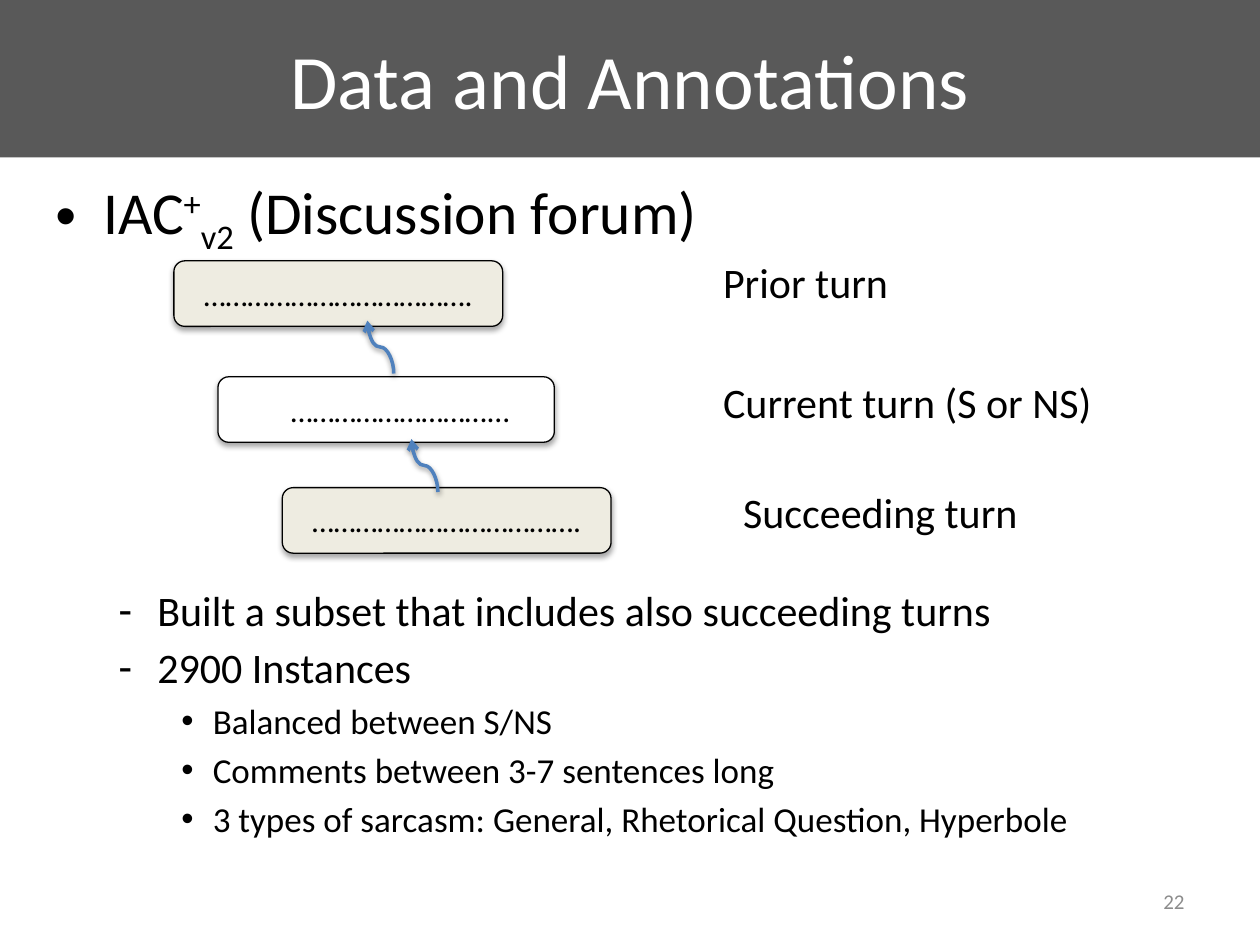
from lxml.etree import SubElement
from pptx import Presentation
from pptx.dml.color import RGBColor
from pptx.enum.shapes import MSO_CONNECTOR, MSO_SHAPE
from pptx.enum.text import MSO_ANCHOR, PP_ALIGN
from pptx.oxml.ns import qn
from pptx.util import Inches, Pt

FONT = "Calibri"
WHITE = RGBColor(0xFF, 0xFF, 0xFF)
BLACK = RGBColor(0, 0, 0)
BANNER = RGBColor(0x59, 0x59, 0x59)
BEIGE = RGBColor(0xEE, 0xEC, 0xE1)
BLUE = RGBColor(0x4F, 0x81, 0xBD)
GRAY = RGBColor(0x8C, 0x8C, 0x8C)

# level: (bullet, left indent, hanging indent, size)
LEVELS = {
    0: ("•", 0.38, 0.38, 34),
    1: ("-", 0.81, 0.31, 24),
    2: ("•", 1.25, 0.25, 20),
}
FINDINGS = [
    (1, "Built a subset that includes also succeeding turns"),
    (1, "2900 Instances"),
    (2, "Balanced between S/NS"),
    (2, "Comments between 3-7 sentences long"),
    (2, "3 types of sarcasm: General, Rhetorical Question, Hyperbole"),
]
# turn box (left, top, width), fill, dots, extra left inset
TURNS = [
    ((1.38, 2.07, 2.61), BEIGE, "……………………………….", 0),
    ((1.73, 2.99, 2.67), WHITE, "………………………...", 0.23),
    ((2.24, 3.87, 2.61), BEIGE, "……………………………….", 0),
]
TURN_LABELS = [
    ((5.64, 1.99, 2.32, 0.5), "Prior turn"),
    ((5.64, 2.94, 3.62, 0.5), "Current turn (S or NS)"),
    ((5.8, 3.81, 2.74, 0.5), "Succeeding turn"),
]
REPLY_ARROWS = [(2.81, 2.65), (3.16, 3.59)]


def format_runs(paragraph, size, color=BLACK):
    for run in paragraph.runs:
        run.font.name = FONT
        run.font.size = Pt(size)
        run.font.color.rgb = color


def add_text(slide, place, text, size, color=BLACK, align=PP_ALIGN.LEFT,
             anchor=MSO_ANCHOR.TOP):
    frame = slide.shapes.add_textbox(*map(Inches, place)).text_frame
    frame.word_wrap = True
    frame.vertical_anchor = anchor
    frame.text = text
    frame.paragraphs[0].alignment = align
    format_runs(frame.paragraphs[0], size, color)
    return frame


def add_box(slide, preset, place, fill, text, size, color):
    box = slide.shapes.add_shape(preset, *map(Inches, place))
    box.shadow.inherit = False
    box.fill.solid()
    box.fill.fore_color.rgb = fill
    box.line.fill.background()
    frame = box.text_frame
    frame.vertical_anchor = MSO_ANCHOR.MIDDLE
    frame.text = text
    frame.paragraphs[0].alignment = PP_ALIGN.CENTER
    format_runs(frame.paragraphs[0], size, color)
    return box


def add_drop_shadow(effects, opacity, distance):
    shadow = SubElement(effects, qn("a:outerShdw"), blurRad=str(Pt(3.1)),
                        dist=str(Pt(distance)), dir="5400000", rotWithShape="0")
    tint = SubElement(shadow, qn("a:srgbClr"), val=str(BLACK))
    SubElement(tint, qn("a:alpha"), val=str(opacity * 1000))


def add_turn(slide, place, fill, dots, inset):
    turn = add_box(slide, MSO_SHAPE.ROUNDED_RECTANGLE, (*place, 0.52), fill,
                   dots, 18, BLACK)
    turn.line.color.rgb = BLACK
    turn.line.width = Pt(0.75)
    turn.text_frame.margin_left = Inches(0.1 + inset)
    add_drop_shadow(turn._element.spPr.find(qn("a:effectLst")), 35, 1.8)


def add_reply_arrow(slide, left, top):
    """Curve drawn lying down, then turned upright to point at the turn above."""
    arrow = slide.shapes.add_connector(
        MSO_CONNECTOR.CURVE, Inches(left), Inches(top + 0.21),
        Inches(left + 0.42), Inches(top))
    arrow.line.color.rgb = BLUE
    arrow.line.width = Pt(2)
    properties = arrow._element.spPr
    properties.find(qn("a:xfrm")).set("rot", str(270 * 60000))
    SubElement(properties.find(qn("a:ln")), qn("a:tailEnd"), type="arrow")
    add_drop_shadow(SubElement(properties, qn("a:effectLst")), 38, 1.6)


def format_bullet(paragraph, level):
    bullet, indent, hanging, size = LEVELS[level]
    paragraph.level = level
    paragraph.space_before = Pt(4)
    properties = paragraph._p.get_or_add_pPr()
    properties.set("marL", str(Inches(indent)))
    properties.set("indent", str(-Inches(hanging)))
    SubElement(properties, qn("a:buFont"), typeface="Arial")
    SubElement(properties, qn("a:buChar"), char=bullet)
    format_runs(paragraph, size)


def add_corpus_heading(slide):
    frame = add_text(slide, (0.34, 1.34, 9.38, 0.7), "IAC", LEVELS[0][3])
    heading = frame.paragraphs[0]
    for text, baseline in [("+", 30), ("v2", -25), (" (Discussion forum)", 0)]:
        run = heading.add_run()
        run.text = text
        run.font._element.set("baseline", str(baseline * 1000))
    format_bullet(heading, 0)


def add_findings(slide):
    frame = add_text(slide, (0.34, 4.59, 9.38, 2.3),
                     "\n".join(text for _, text in FINDINGS), 24)
    for paragraph, (level, _) in zip(frame.paragraphs, FINDINGS):
        format_bullet(paragraph, level)


def main():
    deck = Presentation()
    deck.slide_width, deck.slide_height = Inches(10), Inches(7.5)
    slide = deck.slides.add_slide(deck.slide_layouts[6])

    add_box(slide, MSO_SHAPE.RECTANGLE, (0, 0, 10, 1.25), BANNER,
            "Data and Annotations", 44, WHITE)
    add_corpus_heading(slide)
    add_findings(slide)
    for turn in TURNS:
        add_turn(slide, *turn)
    for place, label in TURN_LABELS:
        add_text(slide, place, label, 24)
    for corner in REPLY_ARROWS:
        add_reply_arrow(slide, *corner)
    add_text(slide, (7.17, 6.95, 2.33, 0.4), "22", 12, GRAY,
             PP_ALIGN.RIGHT, MSO_ANCHOR.MIDDLE)
    deck.save("out.pptx")


if __name__ == "__main__":
    main()
